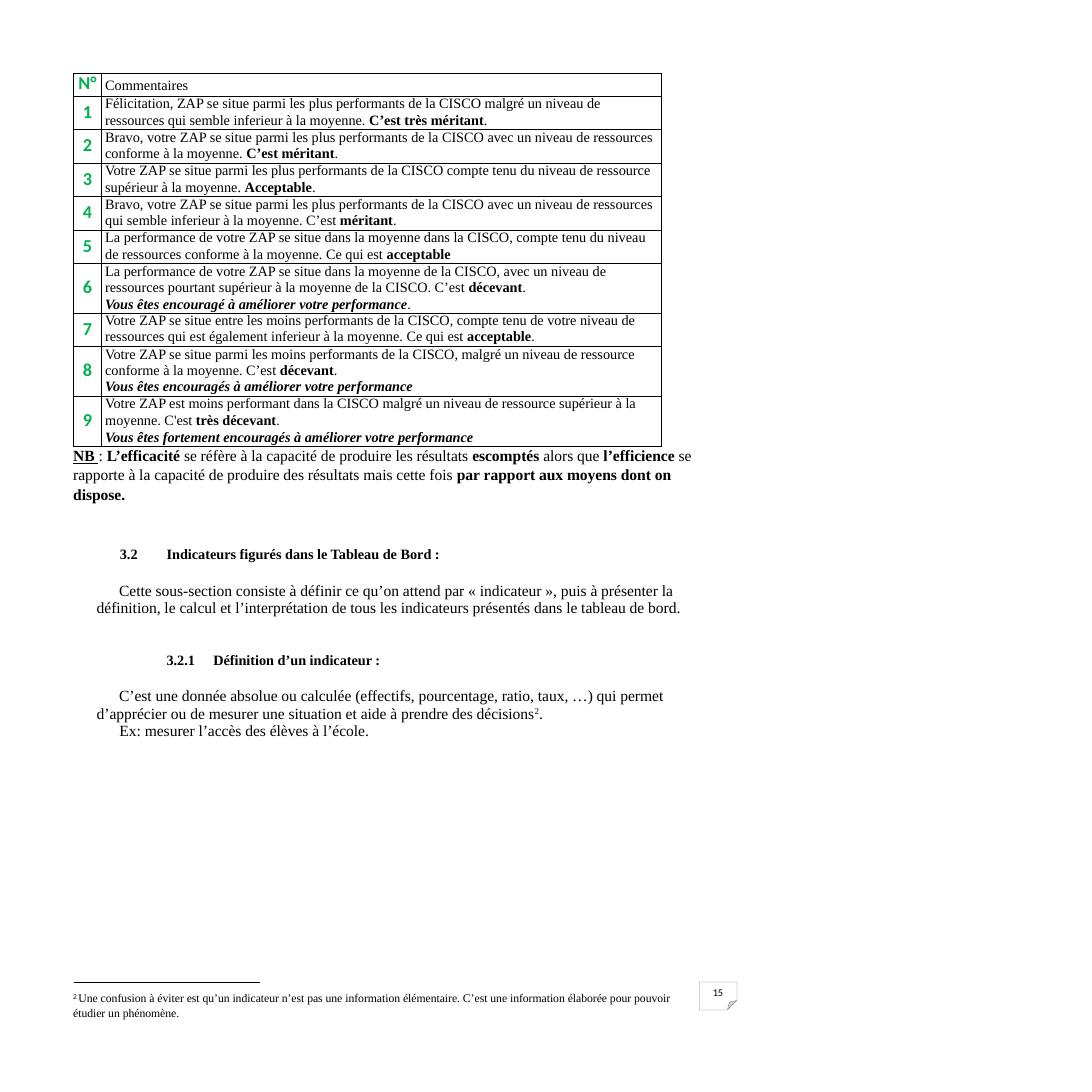
import pptx
import pptx.dml.color
import pptx.enum.shapes
import pptx.enum.text
import pptx.oxml.ns
import pptx.util
from lxml import etree

Cm, Pt = pptx.util.Cm, pptx.util.Pt
SERIF, SANS = "Times New Roman", "Calibri"
BLACK, GREEN, GREY, SILVER = "000000", "00AF50", "808080", "CDCDCD"

# A piece of text is (words, style); b bold, i italic, u underlined, s superscript.
# Every comment is a list of paragraphs, every paragraph a list of pieces.
HEADER = ("N°", "Commentaires")
COMMENTS = [
    [[("Félicitation, ZAP se situe parmi les plus performants de la CISCO malgré un niveau de", "")],
     [("ressources qui semble inferieur à la moyenne. ", ""), ("C’est très méritant", "b"), (".", "")]],
    [[("Bravo, votre ZAP se situe parmi les plus performants de la CISCO avec un niveau de ressources", "")],
     [("conforme à la moyenne. ", ""), ("C’est méritant", "b"), (".", "")]],
    [[("Votre ZAP se situe parmi les plus performants de la CISCO compte tenu du niveau de ressource", "")],
     [("supérieur à la moyenne. ", ""), ("Acceptable", "b"), (".", "")]],
    [[("Bravo, votre ZAP se situe parmi les plus performants de la CISCO avec un niveau de ressources", "")],
     [("qui semble inferieur à la moyenne. C’est ", ""), ("méritant", "b"), (".", "")]],
    [[("La performance de votre ZAP se situe dans la moyenne dans la CISCO, compte tenu du niveau", "")],
     [("de ressources conforme à la moyenne. Ce qui est ", ""), ("acceptable", "b")]],
    [[("La performance de votre ZAP se situe dans la moyenne de la CISCO, avec un niveau de", "")],
     [("ressources pourtant supérieur à la moyenne de la CISCO. C’est ", ""), ("décevant", "b"), (".", "")],
     [("Vous êtes encouragé à améliorer votre performance", "bi"), (".", "")]],
    [[("Votre ZAP se situe entre les moins performants de la CISCO, compte tenu de votre niveau de "
       "ressources qui est également inferieur à la moyenne. Ce qui est ", ""),
      ("acceptable", "b"), (".", "")]],
    [[("Votre ZAP se situe parmi les moins performants de la CISCO, malgré un niveau de ressource "
       "conforme à la moyenne. C’est ", ""), ("décevant", "b"), (".", "")],
     [("Vous êtes encouragés à améliorer votre performance", "bi")]],
    [[("Votre ZAP est moins performant dans la CISCO malgré un niveau de ressource supérieur à la", "")],
     [("moyenne. C'est ", ""), ("très décevant", "b"), (".", "")],
     [("Vous êtes fortement encouragés à améliorer votre performance", "bi")]],
]
THREE_LINE_COMMENTS = (6, 8, 9)

# (pieces, size, left margin cm, first indent cm, space before, line spacing, tab cm)
BODY = [
    ([("NB ", "bu"), (": ", ""), ("L’efficacité ", "b"),
      ("se réfère à la capacité de produire les résultats ", ""), ("escomptés ", "b"),
      ("alors que ", ""), ("l’efficience ", "b"),
      ("se rapporte à la capacité de produire des résultats mais cette fois ", ""),
      ("par rapport aux moyens dont on dispose.", "b")], 12, 0.03, 0, 0, 1.04, None),
    ([("3.2\tIndicateurs figurés dans le Tableau de Bord :", "b")], 11, 1.3, 0, 32.2, 1.0, 3.84),
    ([("Cette sous-section consiste à définir ce qu’on attend par « indicateur », puis à présenter la "
       "définition, le calcul et l’interprétation de tous les indicateurs présentés dans le tableau "
       "de bord.", "")], 12, 0.67, 0.61, 14.7, Pt(13.8), None),
    ([("3.2.1\tDéfinition d’un indicateur :", "b")], 11, 2.57, 0, 26, 1.0, 6.43),
    ([("C’est une donnée absolue ou calculée (effectifs, pourcentage, ratio, taux, …) qui permet "
       "d’apprécier ou de mesurer une situation et aide à prendre des décisions", ""),
      ("2", "s"), (".", "")], 12, 0.67, 0.61, 14.6, Pt(13.8), None),
    ([("Ex: mesurer l’accès des élèves à l’école.", "")], 12, 1.29, 0, 0, Pt(13.4), None),
]
FOOTNOTE_MARK = "2 "
FOOTNOTE = ("Une confusion à éviter est qu’un indicateur n’est pas une information élémentaire. "
            "C’est une information élaborée pour pouvoir étudier un phénomène.")
PAGE_NUMBER = "15"

PAGE_SIDE = 29.69
TABLE_LEFT, TABLE_TOP, COLUMNS = 2.0, 2.0, (0.76, 15.22)
HEADER_ROW, TWO_LINE_ROW, THREE_LINE_ROW = 0.61, 0.91, 1.35
SHEET_LEFT, SHEET_TOP, SHEET_RIGHT, SHEET_BOTTOM = 19.02, 26.7, 20.04, 27.46
FOLD = 0.26


def color(hex_code):
    return pptx.dml.color.RGBColor.from_string(hex_code)


def add_child(parent, tag, **attributes):
    return etree.SubElement(parent, pptx.oxml.ns.qn(tag), attributes)


def write(paragraph, pieces, size, font=SERIF, ink=BLACK):
    for words, style in pieces:
        run = paragraph.add_run()
        run.text = words
        run.font.size, run.font.name = Pt(size), font
        run.font.color.rgb = color(ink)
        run.font.bold, run.font.italic = "b" in style, "i" in style
        run.font.underline = "u" in style
        properties = run._r.get_or_add_rPr()
        properties.set("spc", "-4")
        if "s" in style:
            properties.set("baseline", "30000")


def indent(paragraph, left, first=0, tab=None):
    properties = paragraph._p.get_or_add_pPr()
    properties.set("marL", str(Cm(left)))
    properties.set("indent", str(Cm(first)))
    if tab:
        add_child(add_child(properties, "a:tabLst"), "a:tab", pos=str(Cm(tab)), algn="l")


def add_text_frame(left, top, width, height, wrap=True):
    frame = slide.shapes.add_textbox(Cm(left), Cm(top), Cm(width), Cm(height)).text_frame
    frame.margin_left = frame.margin_top = frame.margin_right = frame.margin_bottom = 0
    frame.word_wrap = wrap
    return frame


def prepare_cell(cell):
    """Clear the fill and margins, and rule all four sides."""
    cell.margin_left = cell.margin_top = cell.margin_right = cell.margin_bottom = 0
    properties = cell._tc.get_or_add_tcPr()
    for side in ("a:lnL", "a:lnR", "a:lnT", "a:lnB"):
        border = add_child(properties, side, w=str(Pt(0.48)))
        add_child(add_child(border, "a:solidFill"), "a:srgbClr", val=BLACK)
    cell.fill.background()


def add_outline(points, close):
    """Draw through points in cm, kept to a hundredth."""
    (start_x, start_y), *others = [(round(x * 100), round(y * 100)) for x, y in points]
    builder = slide.shapes.build_freeform(start_x, start_y, scale=Cm(0.01))
    builder.add_line_segments(others, close=close)
    outline = builder.convert_to_shape()
    outline.shadow.inherit = False
    return outline


def add_comment_table():
    heights = [HEADER_ROW] + [THREE_LINE_ROW if number in THREE_LINE_COMMENTS else TWO_LINE_ROW
                              for number in range(1, len(COMMENTS) + 1)]
    table = slide.shapes.add_table(len(heights), len(COLUMNS), Cm(TABLE_LEFT), Cm(TABLE_TOP),
                                   Cm(sum(COLUMNS)), Cm(sum(heights))).table
    table.first_row = table.horz_banding = False
    for column, width in zip(table.columns, COLUMNS):
        column.width = Cm(width)
    comments = [[[(HEADER[1], "")]]] + COMMENTS
    for number, (height, comment) in enumerate(zip(heights, comments)):
        table.rows[number].height = Cm(height)
        number_cell, comment_cell = table.cell(number, 0), table.cell(number, 1)
        prepare_cell(number_cell)
        prepare_cell(comment_cell)

        number_cell.vertical_anchor = pptx.enum.text.MSO_ANCHOR.MIDDLE
        number_cell.margin_bottom = Cm(0.04)
        label = number_cell.text_frame.paragraphs[0]
        label.alignment = pptx.enum.text.PP_ALIGN.CENTER
        label.line_spacing = Pt(16.2) if number == 0 else 1.0
        write(label, [(str(number or HEADER[0]), "b")], 14, SANS, GREEN)

        comment_cell.margin_left = Cm(0.1)
        if number == 0:
            comment_cell.margin_top = Cm(0.12)
        frame = comment_cell.text_frame
        for position, pieces in enumerate(comment):
            line = frame.add_paragraph() if position else frame.paragraphs[0]
            if number:
                line.line_spacing = Pt(12.8 if position else 12.2)
            write(line, pieces, 11)


def add_body():
    frame = add_text_frame(1.96, 12.1, 17.07, 7.95)
    for position, (pieces, size, left, first, before, spacing, tab) in enumerate(BODY):
        paragraph = frame.add_paragraph() if position else frame.paragraphs[0]
        paragraph.line_spacing, paragraph.space_before = spacing, Pt(before)
        indent(paragraph, left, first, tab)
        write(paragraph, pieces, size)


def add_footer():
    fold_x, fold_y = SHEET_RIGHT - FOLD, SHEET_BOTTOM - FOLD
    tip, crease, edge = (fold_x, SHEET_BOTTOM), (fold_x + 0.05, fold_y + 0.05), (SHEET_RIGHT, fold_y)
    corner = add_outline([edge, crease, tip], close=True)
    corner.fill.solid()
    corner.fill.fore_color.rgb = color(SILVER)
    corner.line.fill.background()
    sheet = add_outline([tip, crease, edge, tip, (SHEET_LEFT, SHEET_BOTTOM), (SHEET_LEFT, SHEET_TOP),
                         (SHEET_RIGHT, SHEET_TOP), edge], close=False)
    sheet.fill.background()
    sheet.line.color.rgb, sheet.line.width = color(GREY), Pt(0.25)

    page_number = add_text_frame(19.35, 26.8, 0.36, 0.38, wrap=False).paragraphs[0]
    indent(page_number, 0.03)
    write(page_number, [(PAGE_NUMBER, "")], 8, SANS)

    rule = slide.shapes.add_connector(pptx.enum.shapes.MSO_CONNECTOR.STRAIGHT,
                                      Cm(2), Cm(26.72), Cm(7.08), Cm(26.72))
    rule.line.color.rgb, rule.line.width = color(BLACK), Pt(0.72)
    add_child(rule._element.spPr, "a:effectLst")

    footnote = add_text_frame(1.96, 26.92, 16.46, 0.81).paragraphs[0]
    footnote.line_spacing = 1.01
    indent(footnote, 0.03)
    write(footnote, [(FOOTNOTE_MARK, "s")], 9.8, SANS)
    write(footnote, [(FOOTNOTE, "")], 9)


presentation = pptx.Presentation()
presentation.slide_width = presentation.slide_height = Cm(PAGE_SIDE)
slide = presentation.slides.add_slide(presentation.slide_layouts[6])
add_comment_table()
add_body()
add_footer()
presentation.save("out.pptx")
